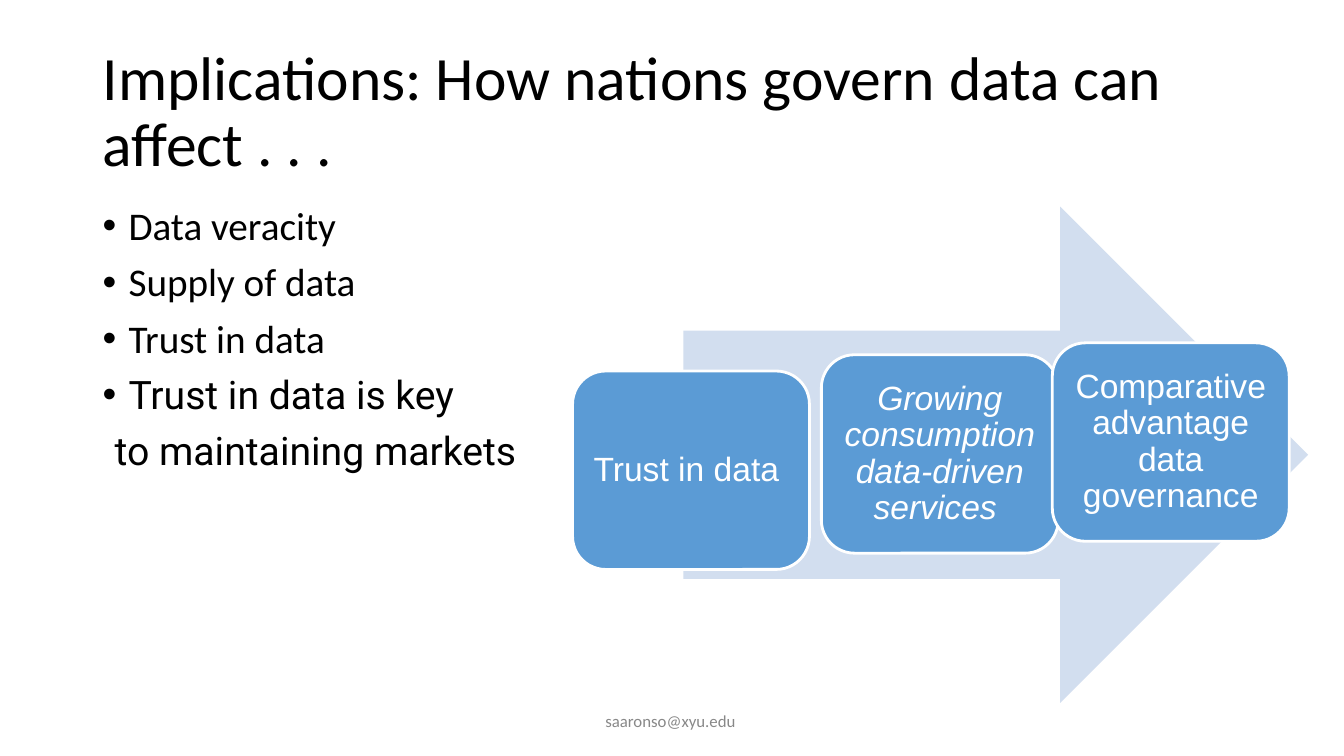
import pptx
import pptx.util
import pptx.dml.color
import pptx.enum.shapes
import pptx.enum.text
import pptx.oxml.ns
import lxml.etree

Cm = pptx.util.Cm
Pt = pptx.util.Pt
Kind = pptx.enum.shapes.MSO_SHAPE
Align = pptx.enum.text.PP_ALIGN
Anchor = pptx.enum.text.MSO_ANCHOR

HUES = {"ink": "000000", "card": "5B9BD5", "arrow": "D2DEEF",
        "white": "FFFFFF", "gray": "888888"}


def hue(name):
    return pptx.dml.color.RGBColor.from_string(HUES[name])


def write(para, text, font="Calibri", size=28, color="ink", italic=False,
          align=Align.LEFT, line=0.9, before=0):
    run = para.add_run()
    run.text = text
    run.font.name = font
    run.font.size = Pt(size)
    run.font.italic = italic
    run.font.color.rgb = hue(color)
    para.alignment = align
    para.line_spacing = line
    para.space_before = Pt(before)


def indent(para, left, first=0, mark=None):
    props = para._p.get_or_add_pPr()
    props.set("marL", str(Cm(left)))
    props.set("indent", str(Cm(first)))
    if mark:
        for tag, key, value in (("a:buFont", "typeface", "Arial"),
                                ("a:buChar", "char", mark)):
            node = lxml.etree.SubElement(props, pptx.oxml.ns.qn(tag))
            node.set(key, value)


def frame(slide, box, anchor):
    text = slide.shapes.add_textbox(*map(Cm, box)).text_frame
    text.word_wrap = True
    text.vertical_anchor = anchor
    return text


def shape(slide, kind, box, fill, line=None):
    item = slide.shapes.add_shape(kind, *map(Cm, box))
    item.shadow.inherit = False
    item.fill.solid()
    item.fill.fore_color.rgb = hue(fill)
    if line:
        item.line.color.rgb = hue(line)
        item.line.width = Pt(2)
    else:
        item.line.fill.background()
    return item


def title(slide, box):
    text = frame(slide, box, Anchor.MIDDLE)
    write(text.paragraphs[0],
          "Implications: How nations govern data can affect . . .", size=44)


def points(slide, box):
    text = frame(slide, box, Anchor.TOP)
    rows = (("Data veracity", "Calibri", "•"),
            ("Supply of data", "Calibri", "•"),
            ("Trust in data", "Calibri", "•"),
            ("Trust in data is key", "Roboto", "•"),
            ("to maintaining markets", "Roboto", None))
    for i, (words, font, mark) in enumerate(rows):
        para = text.add_paragraph() if i else text.paragraphs[0]
        write(para, words, font=font, before=10)
        if mark:
            indent(para, 0.65, -0.65, mark)
        else:
            indent(para, 0.3)


def process(slide, box):
    """Draw the wide arrow with its three cards inside the given box."""
    left, top, width, height = box
    shift = 2.79
    shape(slide, Kind.RIGHT_ARROW,
          (left + shift, top, width - shift, height), "arrow")
    cards = ((0, 4.14, "Trust in data ", False),
             (6.27, 3.73, "Growing consumption data-driven services ", True),
             (12.09, 3.43, "Comparative advantage data governance", False))
    for x, y, words, italic in cards:
        card = shape(slide, Kind.ROUNDED_RECTANGLE,
                     (left + x, top + y, 5.97, 5), "card", "white")
        text = card.text_frame
        text.word_wrap = True
        text.vertical_anchor = Anchor.MIDDLE
        text.margin_left = text.margin_right = Cm(0.25)
        text.margin_top = text.margin_bottom = Cm(0.25)
        write(text.paragraphs[0], words, font="Arial", size=24,
              color="white", italic=italic, align=Align.CENTER)


def footer(slide, box):
    text = frame(slide, box, Anchor.MIDDLE)
    write(text.paragraphs[0], "saaronso@xyu.edu ", size=12, color="gray",
          align=Align.CENTER, line=1.0)


def main():
    deck = pptx.Presentation()
    deck.slide_width = Cm(33.87)
    deck.slide_height = Cm(19.05)
    slide = deck.slides.add_slide(deck.slide_layouts[6])
    title(slide, (2.34, 1.02, 29.21, 3.68))
    points(slide, (2.34, 5.08, 29.21, 12.09))
    process(slide, (14.43, 5.21, 18.54, 12.5))
    footer(slide, (11.23, 17.65, 11.43, 1.02))
    deck.save("out.pptx")


if __name__ == "__main__":
    main()
